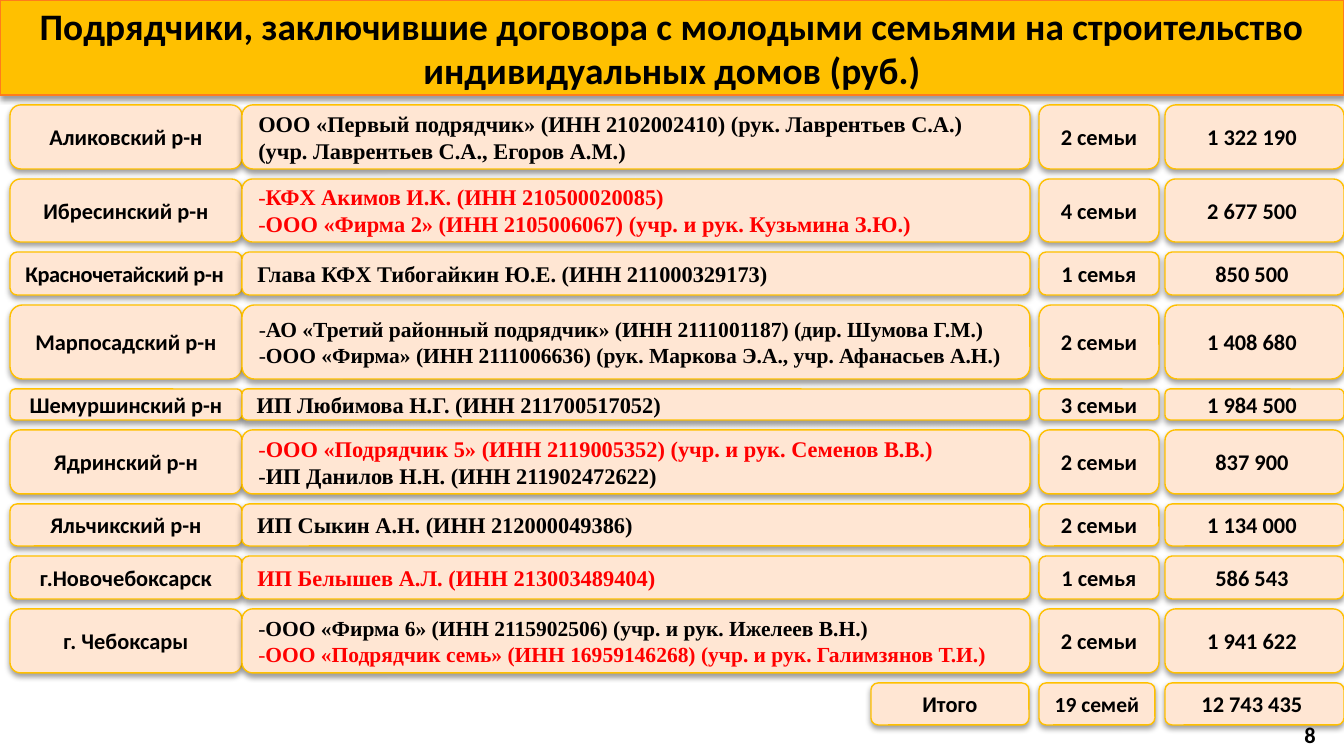
from lxml.etree import SubElement
from pptx import Presentation
from pptx.dml.color import RGBColor
from pptx.enum.shapes import MSO_SHAPE
from pptx.enum.text import MSO_ANCHOR, PP_ALIGN
from pptx.oxml.ns import qn
from pptx.util import Emu, Pt

SLIDE_WIDTH, SLIDE_HEIGHT = 1344, 756
SCALE = 9144000 / SLIDE_WIDTH

BLACK = RGBColor(0x00, 0x00, 0x00)
RED = RGBColor(0xFF, 0x00, 0x00)
GOLD = RGBColor(0xFF, 0xC0, 0x00)
ORANGE = RGBColor(0xFF, 0x7C, 0x1B)
PEACH = RGBColor(0xFF, 0xE6, 0xD3)

TITLE = "Подрядчики, заключившие договора с молодыми семьями на строительство индивидуальных домов (руб.)"
TABLE_TOP, ROW_GAP = 105, 10
DISTRICT = (10, 232)
CONTRACTOR = (242, 788)
FAMILIES = (1039, 120)
AMOUNT = (1165, 179)
TOTAL_LABEL = (871, 158)
TOTAL_FAMILIES = (1039, 116)
LONG_DISTRICT = "Красночетайский р-н"

ROWS = [
    (64, "Аликовский р-н", 12, [
        ("ООО «Первый подрядчик» (ИНН 2102002410) (рук. Лаврентьев С.А.)", BLACK),
        ("(учр. Лаврентьев С.А., Егоров А.М.)", BLACK)], "2 семьи", "1 322 190"),
    (63, "Ибресинский р-н", 12, [
        ("-КФХ Акимов И.К. (ИНН 210500020085)", RED),
        ("-ООО «Фирма 2» (ИНН 2105006067) (учр. и рук. Кузьмина З.Ю.)", RED)], "4 семьи", "2 677 500"),
    (43, LONG_DISTRICT, 12, [
        ("Глава КФХ Тибогайкин Ю.Е. (ИНН 211000329173)", BLACK)], "1 семья", "850 500"),
    (74, "Марпосадский р-н", 11.5, [
        ("-АО «Третий районный подрядчик» (ИНН 2111001187) (дир. Шумова Г.М.)", BLACK),
        ("-ООО «Фирма» (ИНН 2111006636) (рук. Маркова Э.А., учр. Афанасьев А.Н.)", BLACK)],
        "2 семьи", "1 408 680"),
    (31, "Шемуршинский р-н", 12, [
        ("ИП Любимова Н.Г. (ИНН 211700517052)", BLACK)], "3 семьи", "1 984 500"),
    (64, "Ядринский р-н", 12, [
        ("-ООО «Подрядчик 5» (ИНН 2119005352) (учр. и рук. Семенов В.В.)", RED),
        ("-ИП Данилов Н.Н. (ИНН 211902472622)", BLACK)], "2 семьи", "837 900"),
    (42, "Яльчикский р-н", 12, [
        ("ИП Сыкин А.Н. (ИНН 212000049386)", BLACK)], "2 семьи", "1 134 000"),
    (43, "г.Новочебоксарск", 12, [
        ("ИП Белышев А.Л. (ИНН 213003489404)", RED)], "1 семья", "586 543"),
    (64, "г. Чебоксары", 11.5, [
        ("-ООО «Фирма 6» (ИНН 2115902506) (учр. и рук. Ижелеев В.Н.)", BLACK),
        ("-ООО «Подрядчик семь» (ИНН 16959146268) (учр. и рук. Галимзянов Т.И.)", RED)],
        "2 семьи", "1 941 622"),
]


def px(value):
    return Emu(round(value * SCALE))


def add_shadow(shape):
    shape.shadow.inherit = False
    effects = shape._element.spPr.find(qn("a:effectLst"))
    shadow = SubElement(effects, qn("a:outerShdw"), blurRad="40000", dist="20000",
                        dir="5400000", rotWithShape="0")
    color = SubElement(shadow, qn("a:srgbClr"), val="000000")
    SubElement(color, qn("a:alpha"), val="38000")


def write_lines(frame, lines, size, font_name, alignment):
    frame.word_wrap = True
    frame.vertical_anchor = MSO_ANCHOR.MIDDLE
    for index, (text, color) in enumerate(lines):
        paragraph = frame.add_paragraph() if index else frame.paragraphs[0]
        paragraph.alignment = alignment
        paragraph.font.name = font_name
        paragraph.font.size = Pt(size)
        paragraph.font.bold = True
        paragraph.font.color.rgb = color
        if text.startswith("-"):
            dash = paragraph.add_run()
            dash.text = "-"
            dash.font.bold = False
        paragraph.add_run().text = text.removeprefix("-")


def add_box(slide, left, top, width, height, lines, size=12, font_name="Calibri",
            alignment=PP_ALIGN.CENTER, fill=PEACH, line=GOLD):
    shape = slide.shapes.add_shape(MSO_SHAPE.ROUNDED_RECTANGLE,
                                   px(left), px(top), px(width), px(height))
    shape.fill.solid()
    shape.fill.fore_color.rgb = fill
    shape.line.color.rgb = line
    shape.line.width = Pt(0.75)
    add_shadow(shape)
    write_lines(shape.text_frame, lines, size, font_name, alignment)
    return shape


def add_title(slide, left, top, width, height):
    shape = add_box(slide, left, top, width, height, [(TITLE, BLACK)], size=20,
                    fill=GOLD, line=ORANGE)
    shape.adjustments[0] = 0


def add_cell(slide, column, top, height, text, size=12, alignment=PP_ALIGN.CENTER):
    left, width = column
    return add_box(slide, left, top, width, height, [(text, BLACK)], size, alignment=alignment)


def add_row(slide, top, height, district, size, contractors, families, amount):
    is_long = district == LONG_DISTRICT
    cell = add_cell(slide, DISTRICT, top, height, district,
                    alignment=PP_ALIGN.LEFT if is_long else PP_ALIGN.CENTER)
    if is_long:
        run = cell.text_frame.paragraphs[0].runs[0]
        run._r.get_or_add_rPr().set("spc", "-20")
    left, width = CONTRACTOR
    add_box(slide, left, top, width, height, contractors, size,
            "Times New Roman", PP_ALIGN.LEFT)
    add_cell(slide, FAMILIES, top, height, families)
    add_cell(slide, AMOUNT, top, height, f"{amount} ")


def add_total(slide, top, height):
    add_cell(slide, TOTAL_LABEL, top, height, "Итого")
    add_cell(slide, TOTAL_FAMILIES, top, height, "19 семей", 11.5)
    add_cell(slide, AMOUNT, top, height, "12 743 435 ")


def add_page_number(slide, left, top, width, height):
    box = slide.shapes.add_textbox(px(left), px(top), px(width), px(height))
    write_lines(box.text_frame, [("8", BLACK)], 12, "Calibri", PP_ALIGN.RIGHT)


def main():
    presentation = Presentation()
    presentation.slide_width = px(SLIDE_WIDTH)
    presentation.slide_height = px(SLIDE_HEIGHT)
    slide = presentation.slides.add_slide(presentation.slide_layouts[6])
    add_title(slide, 0, 0, SLIDE_WIDTH, 95)
    top = TABLE_TOP
    for height, *content in ROWS:
        add_row(slide, top, height, *content)
        top += height + ROW_GAP
    add_total(slide, top, 42)
    add_page_number(slide, 1281, 715, 48, 40)
    presentation.save("out.pptx")


if __name__ == "__main__":
    main()
